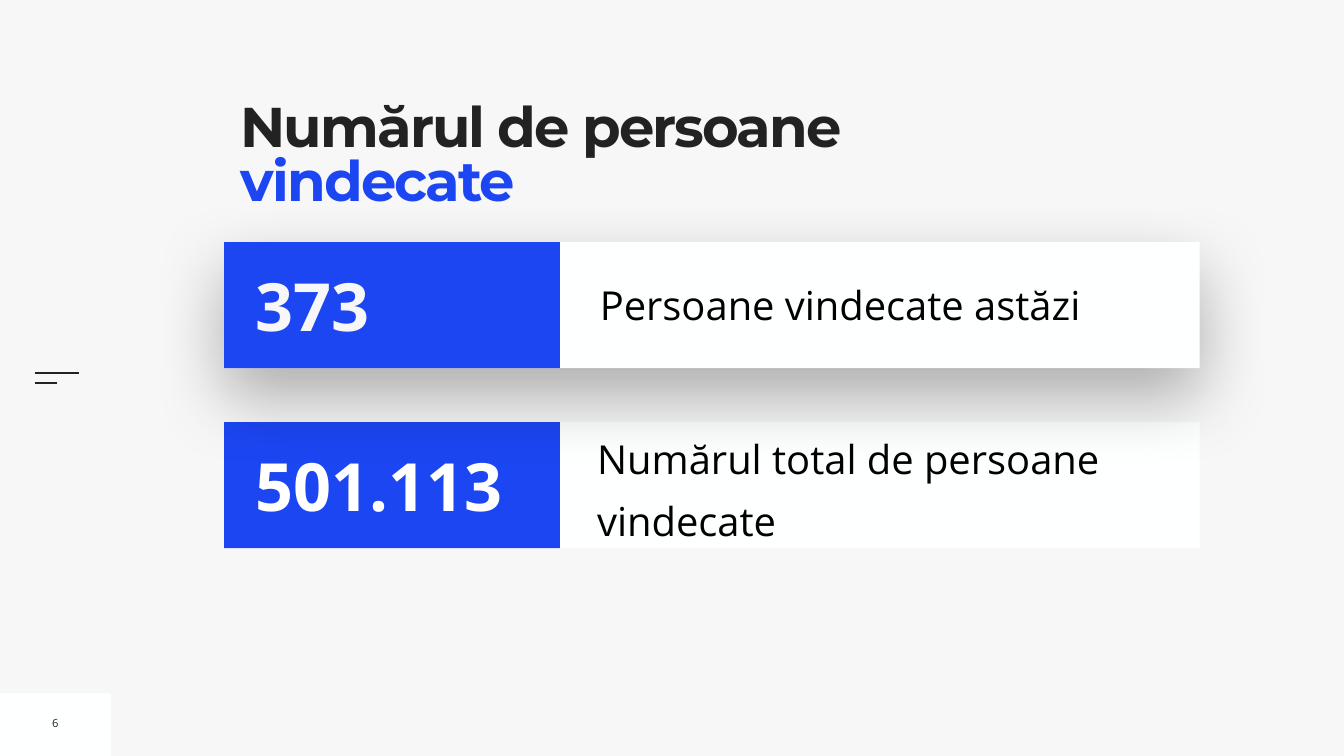
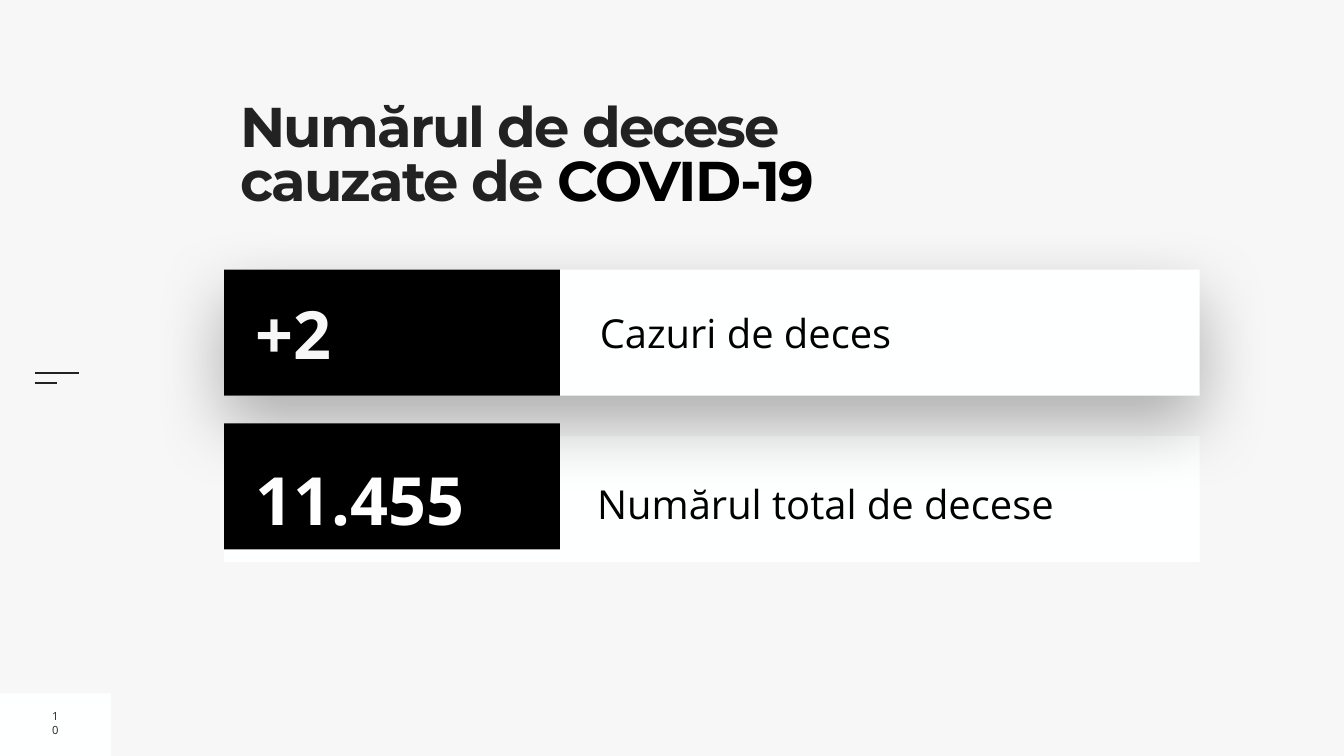
from dataclasses import dataclass

from lxml.etree import SubElement
from pptx import Presentation
from pptx.dml.color import RGBColor as Rgb
from pptx.enum.shapes import MSO_CONNECTOR as Connector, MSO_SHAPE as Preset
from pptx.enum.text import MSO_ANCHOR as Anchor, MSO_AUTO_SIZE as AutoSize, PP_ALIGN as Align
from pptx.oxml.ns import qn
from pptx.util import Cm, Pt


@dataclass(frozen=True)
class Theme:
    page: str = "F7F7F7"
    card: str = "FEFFFF"
    ink: str = "222222"
    black: str = "000000"
    white: str = "FFFFFF"
    blue: str = "1D46F3"
    heading_font: str = "Montserrat"
    body_font: str = "Open Sans"
    title_size: int = 80
    figure_size: int = 95
    label_size: int = 57
    number_size: int = 16


theme = Theme()


def write(box, text, size, colour, font=theme.body_font, bold=False, align=Align.LEFT,
          anchor=Anchor.MIDDLE, inset=0.25, line_spacing=1.0, before=0, tracking=0):
    frame = box.text_frame
    frame.word_wrap = True
    frame.auto_size = AutoSize.NONE
    frame.vertical_anchor = anchor
    frame.margin_left = frame.margin_right = Cm(inset)
    frame.margin_top = frame.margin_bottom = Cm(inset)
    para = frame.paragraphs[0]
    para.alignment = align
    para.line_spacing = line_spacing
    para.space_before = Pt(before)
    span = para.add_run()
    span.text = text
    span.font.name = font
    span.font.size = Pt(size)
    span.font.bold = bold
    span.font.color.rgb = Rgb.from_string(colour)
    if tracking:
        span.font._element.set("spc", str(round(tracking * 100)))


def add_block(shapes, left, top, width, height, colour):
    block = shapes.add_shape(Preset.RECTANGLE, Cm(left), Cm(top), Cm(width), Cm(height))
    block.shadow.inherit = False
    block.fill.solid()
    block.fill.fore_color.rgb = Rgb.from_string(colour)
    block.line.fill.background()
    return block


deck = Presentation()
deck.slide_width, deck.slide_height = Cm(67.74), Cm(38.1)
layout = deck.slide_layouts[5]
layout.background.fill.solid()
layout.background.fill.fore_color.rgb = Rgb.from_string(theme.page)

CARD_LEFT, CARD_WIDTH, CARD_HEIGHT, BADGE_WIDTH = 11.3, 49.17, 6.35, 16.92

pages = [
    {
        "number": "6", "accent": theme.blue,
        "title": ("Numărul de persoane ", "vindecate"),
        "today": ("373", "Persoane vindecate astăzi", 12.2),
        "total": ("501.113", "Numărul total de persoane vindecate", 21.27),
        "total_badge_top": 21.27,
    },
    {
        "number": "10", "accent": theme.black,
        "title": ("Numărul de decese cauzate de ", "COVID-19"),
        "today": ("+2", "Cazuri de deces", 13.59),
        "total": ("11.455", "Numărul total de decese", 21.97),
        "total_badge_top": 21.34,
    },
]

for index, content in enumerate(pages):
    page = deck.slides.add_slide(layout)

    if index == 0:
        shared = [add_block(page.shapes, 0, 34.95, 5.59, 3.15, theme.card)]
        for top, length in ((18.82, 2.24), (19.28, 1.12)):
            dash = page.shapes.add_connector(
                Connector.STRAIGHT, Cm(1.75), Cm(top), Cm(1.75 + length), Cm(top))
            dash.line.color.rgb = Rgb.from_string(theme.ink)
            dash.line.width = Pt(3)
            SubElement(dash.element.spPr, qn("a:effectLst"))
            shared.append(dash)
        for item in shared:
            layout.shapes.element.append(item.element)

    title = page.shapes.title
    title.left, title.top, title.width, title.height = Cm(12.12), Cm(5.26), Cm(33.05), Cm(6.93)
    for text, colour in zip(content["title"], (theme.ink, content["accent"])):
        write(title, text, theme.title_size, colour, font=theme.heading_font, bold=True,
              anchor=Anchor.TOP, inset=0, line_spacing=0.8, tracking=-2.7)

    number_box = page.shapes.add_textbox(Cm(2.36), Cm(35.79), Cm(0.86), Cm(1.3))
    write(number_box, content["number"], theme.number_size, theme.ink, align=Align.CENTER)

    for row in ("total", "today"):
        figure, label, card_top = content[row]
        raised = row == "today"
        group = page.shapes.add_group_shape().shapes

        card = add_block(group, CARD_LEFT, card_top, CARD_WIDTH, CARD_HEIGHT, theme.card)
        if raised:
            effects = card.element.spPr.find(qn("a:effectLst"))
            shadow = SubElement(effects, qn("a:outerShdw"), blurRad=str(Pt(100)),
                                dist=str(Pt(40)), dir="5400000", rotWithShape="0")
            shade = SubElement(shadow, qn("a:srgbClr"), val=theme.black)
            SubElement(shade, qn("a:alpha"), val="30000")

        if raised:
            label_box = group.add_textbox(Cm(29.98), Cm(card_top + 1.69), Cm(29.87), Cm(2.95))
            write(label_box, label, theme.label_size, theme.black)
        else:
            label_box = group.add_textbox(Cm(30.1), Cm(card_top + 0.05), Cm(30.35), Cm(5.99))
            write(label_box, label, theme.label_size, theme.black,
                  inset=0, line_spacing=1.3, before=20)

        badge_top = card_top if raised else content["total_badge_top"]
        add_block(group, CARD_LEFT, badge_top, BADGE_WIDTH, CARD_HEIGHT, content["accent"])
        figure_box = group.add_textbox(Cm(12.65), Cm(card_top + 0.89), Cm(15.32), Cm(4.57))
        write(figure_box, figure, theme.figure_size,
              theme.page if raised else theme.white, bold=True)

deck.save("out.pptx")
